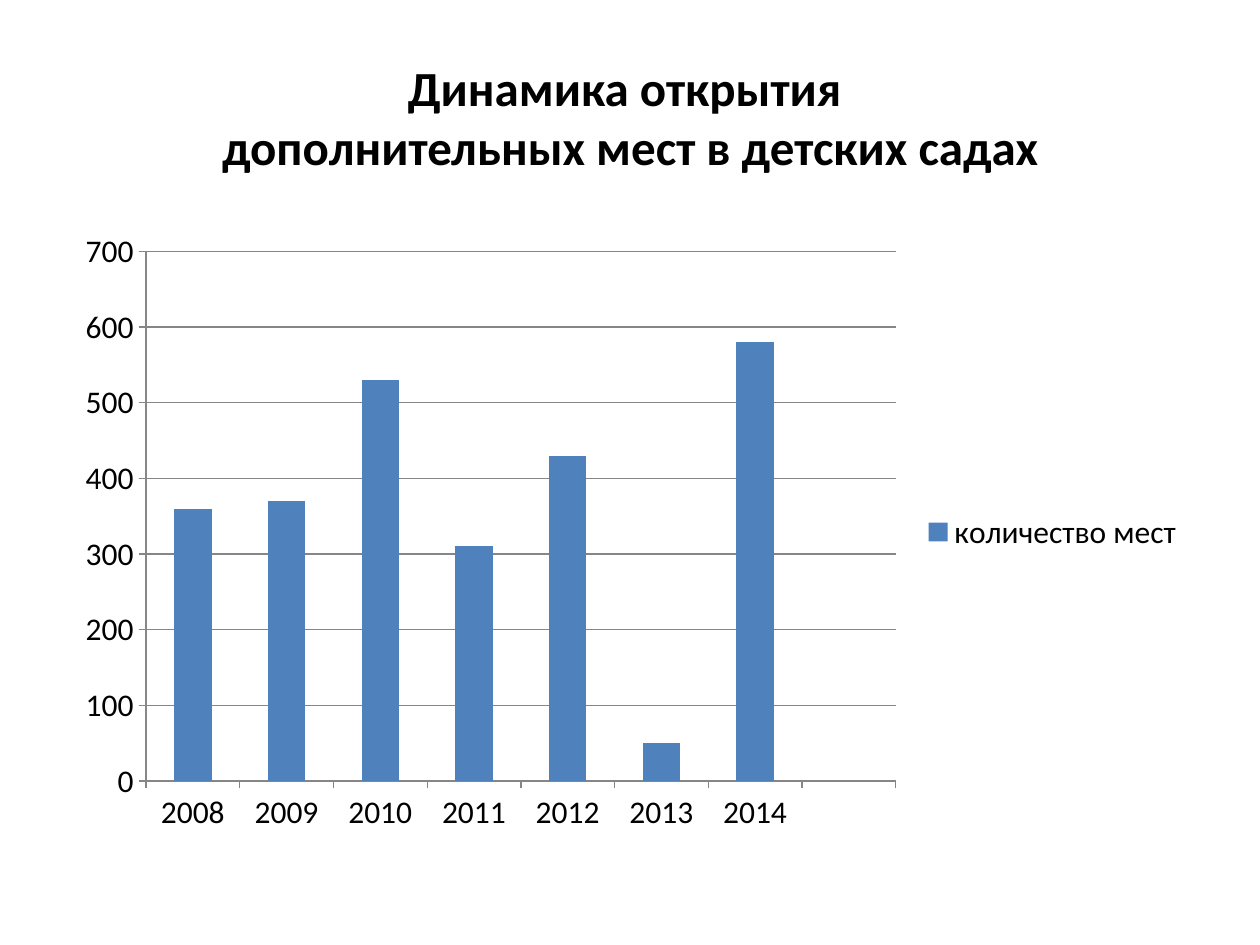
from dataclasses import dataclass

from pptx import Presentation
from pptx.chart.data import CategoryChartData
from pptx.dml.color import RGBColor
from pptx.enum.chart import XL_CHART_TYPE, XL_LEGEND_POSITION, XL_TICK_MARK
from pptx.enum.text import MSO_ANCHOR, PP_ALIGN
from pptx.util import Pt

COLUMNS = XL_CHART_TYPE.COLUMN_CLUSTERED
LEGEND_RIGHT = XL_LEGEND_POSITION.RIGHT
TICK_OUTSIDE = XL_TICK_MARK.OUTSIDE
TICK_NONE = XL_TICK_MARK.NONE
MIDDLE = MSO_ANCHOR.MIDDLE
CENTER = PP_ALIGN.CENTER


@dataclass
class Theme:
    font: str = "Calibri"
    text: RGBColor = RGBColor(0x00, 0x00, 0x00)
    bar: RGBColor = RGBColor(0x4F, 0x81, 0xBD)
    axis: RGBColor = RGBColor(0x86, 0x86, 0x86)
    title_size: int = 28
    chart_size: int = 18


THEME = Theme()


def px(count):
    """Turn pixels, 126 to the inch, into EMU."""
    return round(count * 914400 / 126)


def style_font(font, size, bold):
    font.name = THEME.font
    font.size = Pt(size)
    font.bold = bold
    font.color.rgb = THEME.text


presentation = Presentation()
presentation.slide_width = px(1260)
presentation.slide_height = px(945)
slide = presentation.slides.add_slide(presentation.slide_layouts[6])

# Title
title = slide.shapes.add_textbox(px(63), px(38), px(1134), px(157))
text_frame = title.text_frame
text_frame.word_wrap = True
text_frame.vertical_anchor = MIDDLE
text_frame.text = "Динамика открытия \vдополнительных мест в детских садах"
paragraph = text_frame.paragraphs[0]
paragraph.alignment = CENTER
for run in paragraph.runs:
    style_font(run.font, THEME.title_size, True)

# Places opened per year, with an empty slot after the last year
places = CategoryChartData()
places.categories = [str(year) for year in range(2008, 2015)] + [""]
places.add_series("количество мест", [360, 370, 530, 310, 430, 50, 580, None])

chart = slide.shapes.add_chart(
    COLUMNS, px(63), px(220), px(1134), px(624), places).chart
style_font(chart.font, THEME.chart_size, False)
chart.has_title = False
chart.has_legend = True
chart.legend.position = LEGEND_RIGHT
chart.legend.include_in_layout = False

plot = chart.plots[0]
plot.gap_width = 150
plot.vary_by_categories = False
bar_fill = plot.series[0].format.fill
bar_fill.solid()
bar_fill.fore_color.rgb = THEME.bar

value_axis = chart.value_axis
value_axis.minimum_scale = 0
value_axis.maximum_scale = 700
value_axis.major_unit = 100
value_axis.has_major_gridlines = True
for axis in (chart.category_axis, value_axis):
    axis.major_tick_mark = TICK_OUTSIDE
    axis.minor_tick_mark = TICK_NONE
for line in (chart.category_axis.format.line, value_axis.format.line,
             value_axis.major_gridlines.format.line):
    line.color.rgb = THEME.axis
    line.width = Pt(0.75)

presentation.save("out.pptx")
